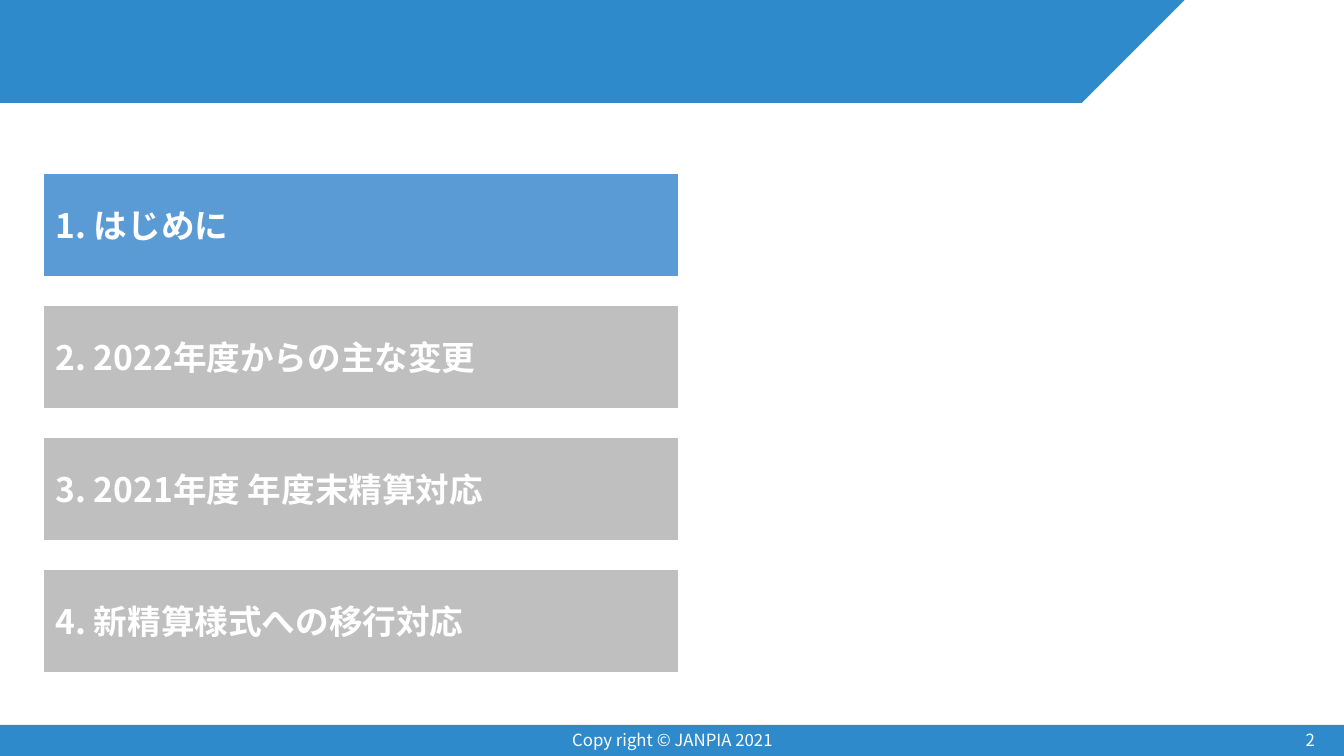
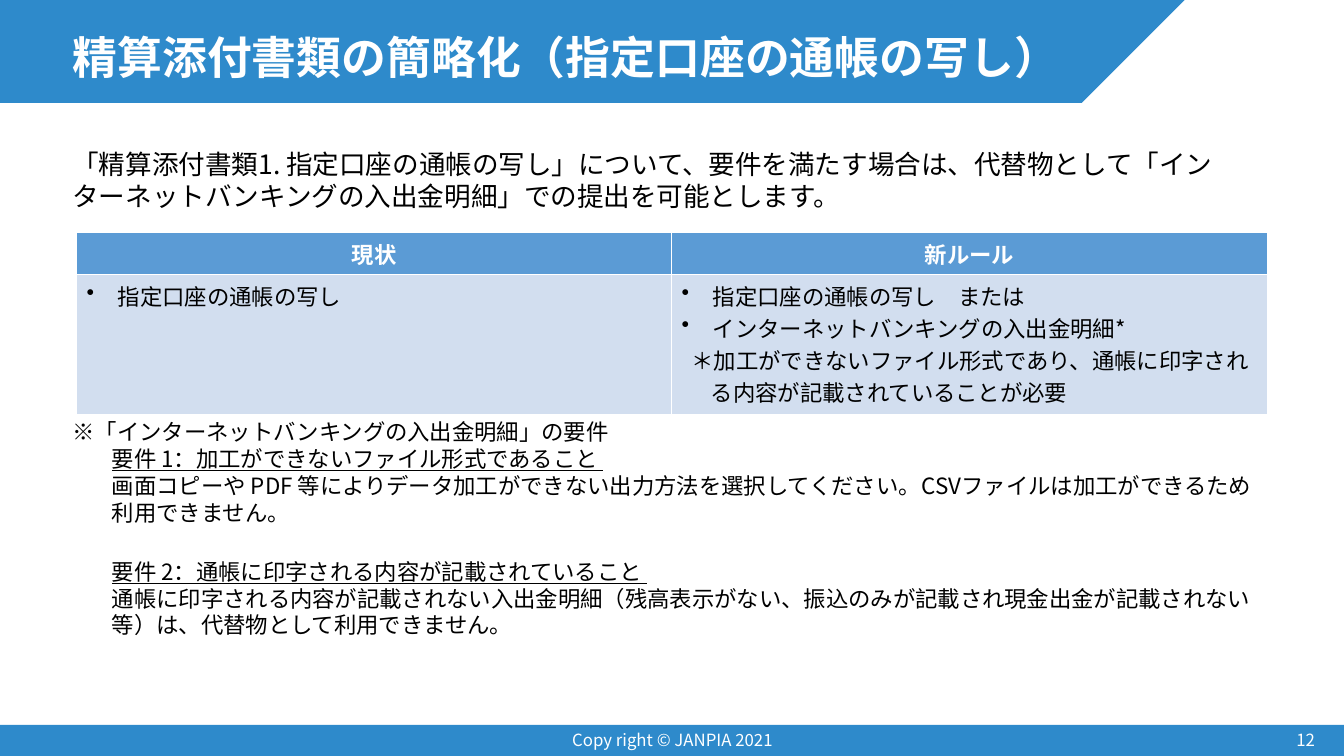
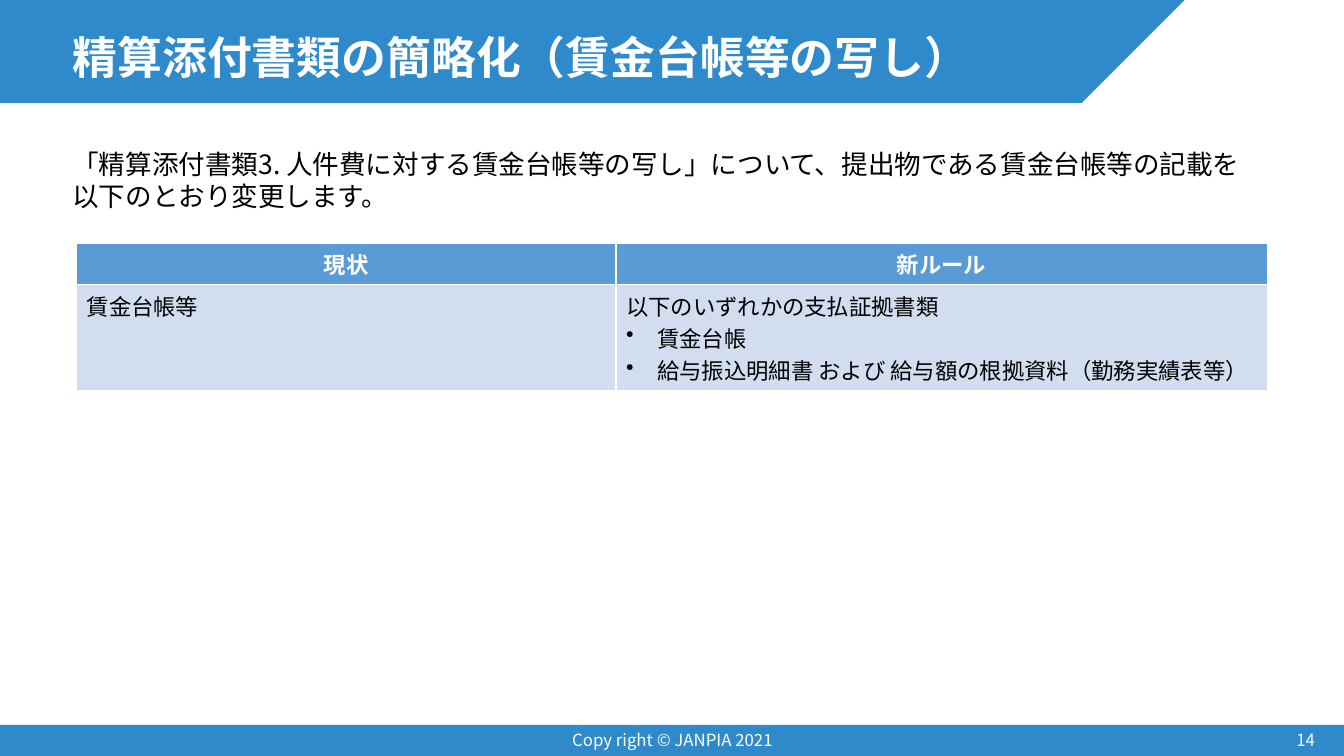
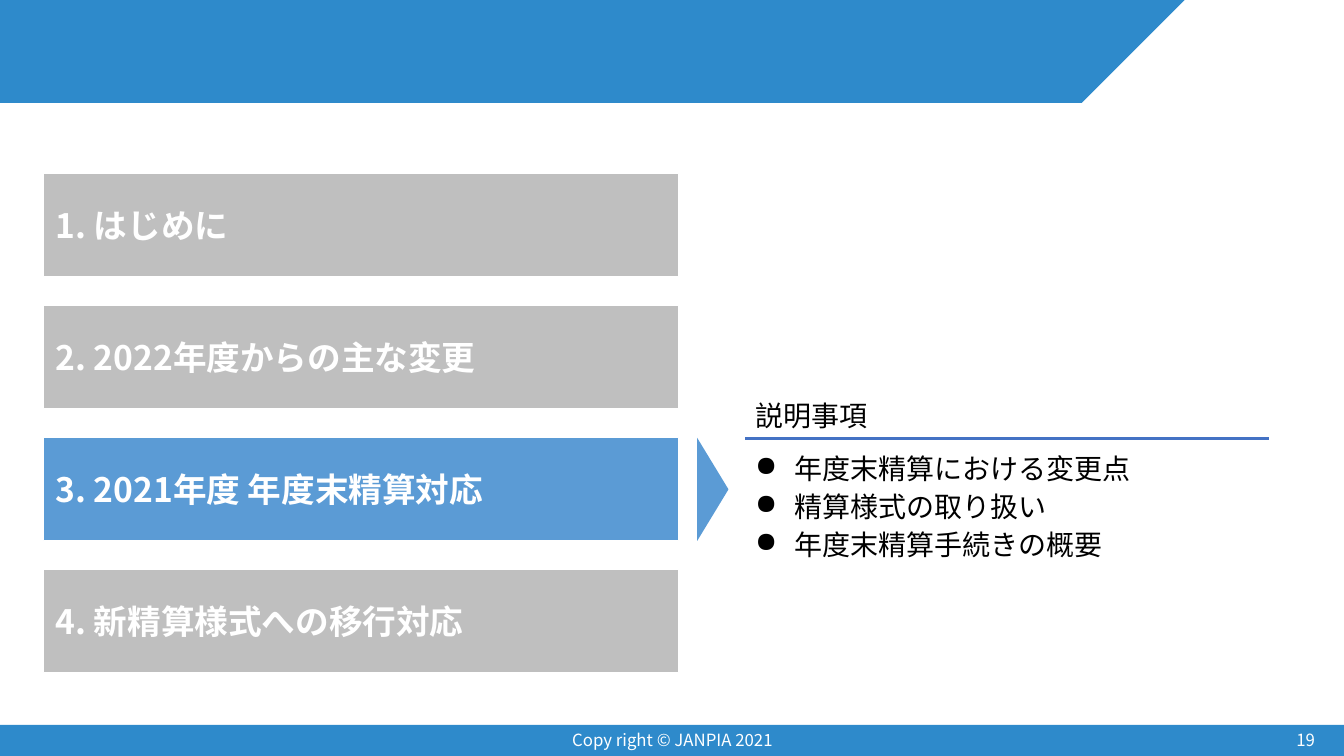
from pptx import Presentation
from pptx.dml.color import RGBColor
from pptx.enum.shapes import MSO_CONNECTOR as Wire, MSO_SHAPE as Form
from pptx.enum.text import MSO_ANCHOR as Anchor, MSO_AUTO_SIZE as Fit, PP_ALIGN as Align
from pptx.oxml.ns import qn
from pptx.util import Inches, Pt
from lxml.etree import SubElement

FONT = "Noto Sans CJK JP"
BAND = RGBColor(0x2E, 0x8A, 0xCB)
BLUE = RGBColor(0x5B, 0x9B, 0xD5)
PALE = RGBColor(0xD2, 0xDE, 0xEF)
RULE = RGBColor(0x44, 0x72, 0xC4)
GRAY = RGBColor(0xBF, 0xBF, 0xBF)
WHITE = RGBColor(0xFF, 0xFF, 0xFF)
BLACK = RGBColor(0, 0, 0)

TOPICS = ["1. はじめに", "2. 2022年度からの主な変更",
          "3. 2021年度 年度末精算対応", "4. 新精算様式への移行対応"]
DOT = dict(left=0.31, hang=0.31, mark="•")
STEP = dict(left=0.39)
HEAD = dict(left=0.39, under=True)


def write(para, text, size=16, color=BLACK, bold=False, under=False,
          align=Align.LEFT, left=0, hang=0, mark=None, before=0, lead=1.0):
    props = para._p.get_or_add_pPr()
    props.set("marL", str(Inches(left)))
    props.set("indent", str(-Inches(hang)))
    if mark:
        SubElement(props, qn("a:buChar")).set("char", mark)
    para.alignment = align
    para.line_spacing = lead
    para.space_before = Pt(before)
    run = para.add_run()
    run.text = text
    font = run.font
    font.size, font.bold, font.underline = Pt(size), bold, under
    font.color.rgb = color
    font.name = FONT
    SubElement(run._r.get_or_add_rPr(), qn("a:ea")).set("typeface", FONT)


def fill(frame, items, **style):
    for i, item in enumerate(items):
        text, extra = (item, {}) if isinstance(item, str) else item
        para = frame.add_paragraph() if i else frame.paragraphs[0]
        write(para, text, **{**style, **extra})


class Deck:
    def __init__(self):
        self.prs = Presentation()
        self.prs.slide_width = Inches(13.33)
        self.prs.slide_height = Inches(7.5)
        self.slide = None

    def page(self, number, title=None):
        first = self.slide is None
        layout = self.prs.slide_layouts[5 if title else 6]
        self.slide = self.prs.slides.add_slide(layout)
        if first:
            self.bands()
        if title:
            self.title(title)
        self.text(10.14, 7.14, 3, 0.4, [str(number)], anchor=Anchor.MIDDLE,
                  size=12, color=WHITE, align=Align.RIGHT)
        self.text(4.42, 7.14, 4.5, 0.4, ["Copy right © JANPIA 2021"],
                  anchor=Anchor.MIDDLE, size=12, color=WHITE, align=Align.CENTER)

    def bands(self):
        tree = self.prs.slide_master.shapes._spTree
        for band in (self.shape(Form.RECTANGLE, 0, 7.19, 13.33, 0.31, BAND),
                     self.shape(Form.RECTANGLE, 0, 0, 10.73, 1.02, BAND),
                     self.shape(Form.RIGHT_TRIANGLE, 10.73, 0, 1.02, 1.02, BAND, turn=90)):
            tree.append(band._element)

    def title(self, text):
        box = self.slide.shapes.title
        box.left, box.top = Inches(0.62), Inches(0.32)
        box.width, box.height = Inches(11.5), Inches(0.55)
        frame = box.text_frame
        frame.auto_size = Fit.NONE
        frame.vertical_anchor = Anchor.MIDDLE
        fill(frame, [text], size=32, color=WHITE, bold=True, lead=0.9)

    def shape(self, form, x, y, w, h, color, edge=None, turn=0):
        item = self.slide.shapes.add_shape(form, Inches(x), Inches(y), Inches(w), Inches(h))
        item.shadow.inherit = False
        item.rotation = turn
        item.fill.solid()
        item.fill.fore_color.rgb = color
        if edge is None:
            item.line.fill.background()
        else:
            item.line.color.rgb = edge
            item.line.width = Pt(0.75)
        return item

    def text(self, x, y, w, h, items, anchor=Anchor.TOP, **style):
        box = self.slide.shapes.add_textbox(Inches(x), Inches(y), Inches(w), Inches(h))
        frame = box.text_frame
        frame.word_wrap = True
        frame.vertical_anchor = anchor
        fill(frame, items, **style)

    def line(self, x, y, end, color, width):
        rule = self.slide.shapes.add_connector(
            Wire.STRAIGHT, Inches(x), Inches(y), Inches(end), Inches(y))
        rule.line.color.rgb = color
        rule.line.width = Pt(width)
        SubElement(rule._element.spPr, qn("a:effectLst"))

    def table(self, y, widths, tall, now, new):
        heights = [0.41, tall]
        grid = self.slide.shapes.add_table(
            2, 2, Inches(0.76), Inches(y), Inches(sum(widths)), Inches(sum(heights))).table
        for col, width in zip(grid.columns, widths):
            col.width = Inches(width)
        for row, height in zip(grid.rows, heights):
            row.height = Inches(height)
        top = dict(color=WHITE, bold=True, align=Align.CENTER)
        rows = [([["現状"], ["新ルール"]], BLUE, top), ([now, new], PALE, {})]
        for r, (cells, color, style) in enumerate(rows):
            for c, items in enumerate(cells):
                cell = grid.cell(r, c)
                cell.fill.solid()
                cell.fill.fore_color.rgb = color
                fill(cell.text_frame, items, **style)

    def agenda(self, active):
        for i, topic in enumerate(TOPICS):
            color = BLUE if i == active else GRAY
            box = self.shape(Form.RECTANGLE, 0.43, 1.72 + 1.31 * i, 6.3, 1.02, color, WHITE)
            frame = box.text_frame
            frame.margin_left = frame.margin_right = Inches(0.12)
            frame.margin_top = frame.margin_bottom = 0
            frame.vertical_anchor = Anchor.MIDDLE
            fill(frame, [topic], size=24, color=WHITE, bold=True)

    def intro(self, text):
        self.text(0.62, 1.42, 12.01, 0.9, [text], size=19)


def main():
    deck = Deck()

    deck.page(2)
    deck.agenda(0)

    deck.page(12, "精算添付書類の簡略化（指定口座の通帳の写し）")
    deck.intro("「精算添付書類1. 指定口座の通帳の写し」について、要件を満たす場合は、"
               "代替物として「インターネットバンキングの入出金明細」での提出を可能とします。")
    deck.table(2.31, [5.9, 5.91], 1.39, [("指定口座の通帳の写し", DOT)], [
        ("指定口座の通帳の写し　または", DOT),
        ("インターネットバンキングの入出金明細*", DOT),
        ("＊加工ができないファイル形式であり、通帳に印字される内容が記載されていることが必要",
         dict(left=0.29, hang=0.19))])
    deck.text(0.62, 4.1, 12.01, 2.7, [
        ("※「インターネットバンキングの入出金明細」の要件", dict(left=0.39, hang=0.39)),
        ("要件 1：加工ができないファイル形式であること ", HEAD),
        ("画面コピーや PDF 等によりデータ加工ができない出力方法を選択してください。"
         "CSVファイルは加工ができるため利用できません。", STEP),
        ("要件 2：通帳に印字される内容が記載されていること ", dict(HEAD, before=23)),
        ("通帳に印字される内容が記載されない入出金明細（残高表示がない、"
         "振込のみが記載され現金出金が記載されない等）は、代替物として利用できません。", STEP)])

    deck.page(14, "精算添付書類の簡略化（賃金台帳等の写し）")
    deck.intro("「精算添付書類3. 人件費に対する賃金台帳等の写し」について、"
               "提出物である賃金台帳等の記載を以下のとおり変更します。")
    deck.table(2.41, [5.35, 6.46], 1.06, ["賃金台帳等"], [
        "以下のいずれかの支払証拠書類",
        ("賃金台帳", DOT),
        ("給与振込明細書 および 給与額の根拠資料（勤務実績表等）", DOT)])

    deck.page(19)
    deck.agenda(2)
    deck.line(7.39, 4.35, 12.59, RULE, 2.25)
    deck.text(7.39, 3.9, 5.2, 0.5, ["説明事項"], size=20)
    deck.shape(Form.ISOSCELES_TRIANGLE, 6.56, 4.7, 1.02, 0.31, BLUE, turn=90)
    points = ["年度末精算における変更点", "精算様式の取り扱い", "年度末精算手続きの概要"]
    deck.text(7.39, 4.43, 5.31, 1.5, [points[0]] + [(p, dict(before=3)) for p in points[1:]],
              size=20, left=0.39, hang=0.39, mark="●")

    deck.prs.save("out.pptx")


if __name__ == "__main__":
    main()
